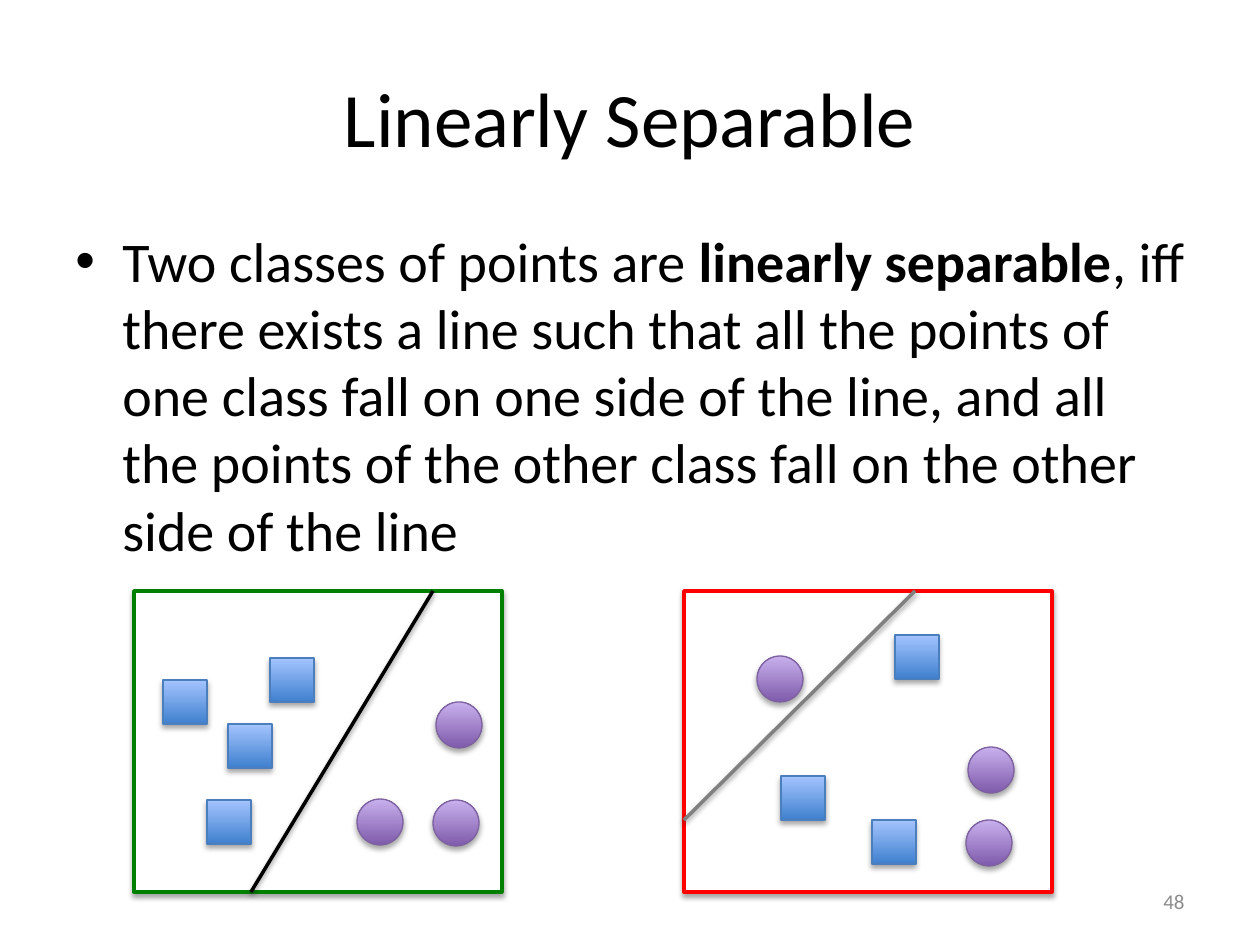
from lxml import etree
from pptx import Presentation, util as u
from pptx.dml.color import RGBColor
from pptx.enum import shapes, text
from pptx.oxml.ns import qn

PX = 914400 / 126


def px(*lengths):
    return [u.Emu(round(n * PX)) for n in lengths]


def color(target, value):
    target.rgb = RGBColor.from_string(value)


prs = Presentation()
prs.slide_width, prs.slide_height = px(1260, 945)
slide = prs.slides.add_slide(prs.slide_layouts[6])


def write(content, box, size, align=text.PP_ALIGN.LEFT, ink="000000",
          anchor=text.MSO_ANCHOR.MIDDLE):
    """Write content, where every second piece between ** marks is bold."""
    frame = slide.shapes.add_textbox(*px(*box)).text_frame
    frame.word_wrap = True
    frame.vertical_anchor = anchor
    paragraph = frame.paragraphs[0]
    paragraph.alignment = align
    for i, piece in enumerate(content.split("**")):
        run = paragraph.add_run()
        run.text = piece
        run.font.name, run.font.size = "Calibri", u.Pt(size)
        run.font.bold = i % 2 == 1
        color(run.font.color, ink)
    return paragraph


# Title and definition
write("Linearly Separable", (63, 38, 1134, 158), 44, align=text.PP_ALIGN.CENTER)
definition = write(
    "Two classes of points are **linearly separable**, iff there exists a line "
    "such that all the points of one class fall on one side of the line, and all "
    "the points of the other class fall on the other side of the line",
    (63, 220, 1134, 624), 32, anchor=text.MSO_ANCHOR.TOP)
definition.space_before = u.Pt(6.4)
bullet = definition._p.get_or_add_pPr()
indent = px(47)[0]
bullet.set("marL", str(indent))
bullet.set("indent", str(-indent))
etree.SubElement(bullet, qn("a:buFont")).set("typeface", "Arial")
etree.SubElement(bullet, qn("a:buChar")).set("char", "•")

# Panels: frame colour and left edge, square and circle points, dividing line
TOP, WIDTH, HEIGHT = 591, 368, 301
panels = [
    ("008000", 134,
     [(163, 680), (228, 724), (207, 800), (270, 658)],
     [(436, 702), (357, 799), (433, 800)],
     "000000", (251, TOP + HEIGHT, 433, TOP)),
    ("FF0000", 684,
     [(895, 635), (781, 776), (872, 820)],
     [(968, 747), (757, 656), (966, 820)],
     "808080", (915, TOP, 684, 820)),
]
RECT, OVAL = shapes.MSO_SHAPE.RECTANGLE, shapes.MSO_SHAPE.OVAL
shadowed = []
for frame_color, left, squares, circles, divider_color, divider_ends in panels:
    frame = slide.shapes.add_shape(RECT, *px(left, TOP, WIDTH, HEIGHT))
    frame.fill.solid()
    color(frame.fill.fore_color, "FFFFFF")
    color(frame.line.color, frame_color)
    frame.line.width = u.Pt(2)
    frame.shadow.inherit = False
    shadowed.append((frame, 35, 1.8))

    for kind, points, size, dark, light, edge in (
            (RECT, squares, 44, "3F80CE", "A4C4FF", "4B7EBC"),
            (OVAL, circles, 46, "7F5BAB", "C8B0ED", "7D60A0")):
        for x, y in points:
            point = slide.shapes.add_shape(kind, *px(x, y, size, size))
            point.fill.gradient()
            point.fill.gradient_angle = 90
            for stop, shade, position in zip(point.fill.gradient_stops,
                                             (dark, light), (0, 1)):
                color(stop.color, shade)
                stop.position = position
            color(point.line.color, edge)
            point.line.width = u.Pt(0.75)
            point.shadow.inherit = False
            shadowed.append((point, 35, 1.8))

    divider = slide.shapes.add_connector(shapes.MSO_CONNECTOR.STRAIGHT,
                                         *px(*divider_ends))
    color(divider.line.color, divider_color)
    divider.line.width = u.Pt(2)
    etree.SubElement(divider._element.spPr, qn("a:effectLst"))
    shadowed.append((divider, 38, 1.6))

# Soft shadows straight below
for item, opacity, distance in shadowed:
    effects = item._element.spPr.find(qn("a:effectLst"))
    shadow = etree.SubElement(
        effects, qn("a:outerShdw"), blurRad=str(u.Pt(3.1)),
        dist=str(u.Pt(distance)), dir="5400000", rotWithShape="0")
    black = etree.SubElement(shadow, qn("a:srgbClr"), val="000000")
    etree.SubElement(black, qn("a:alpha"), val=str(opacity * 1000))

# Slide number
write("48", (903, 876, 294, 50), 12, align=text.PP_ALIGN.RIGHT, ink="8C8C8C")

prs.save("out.pptx")
